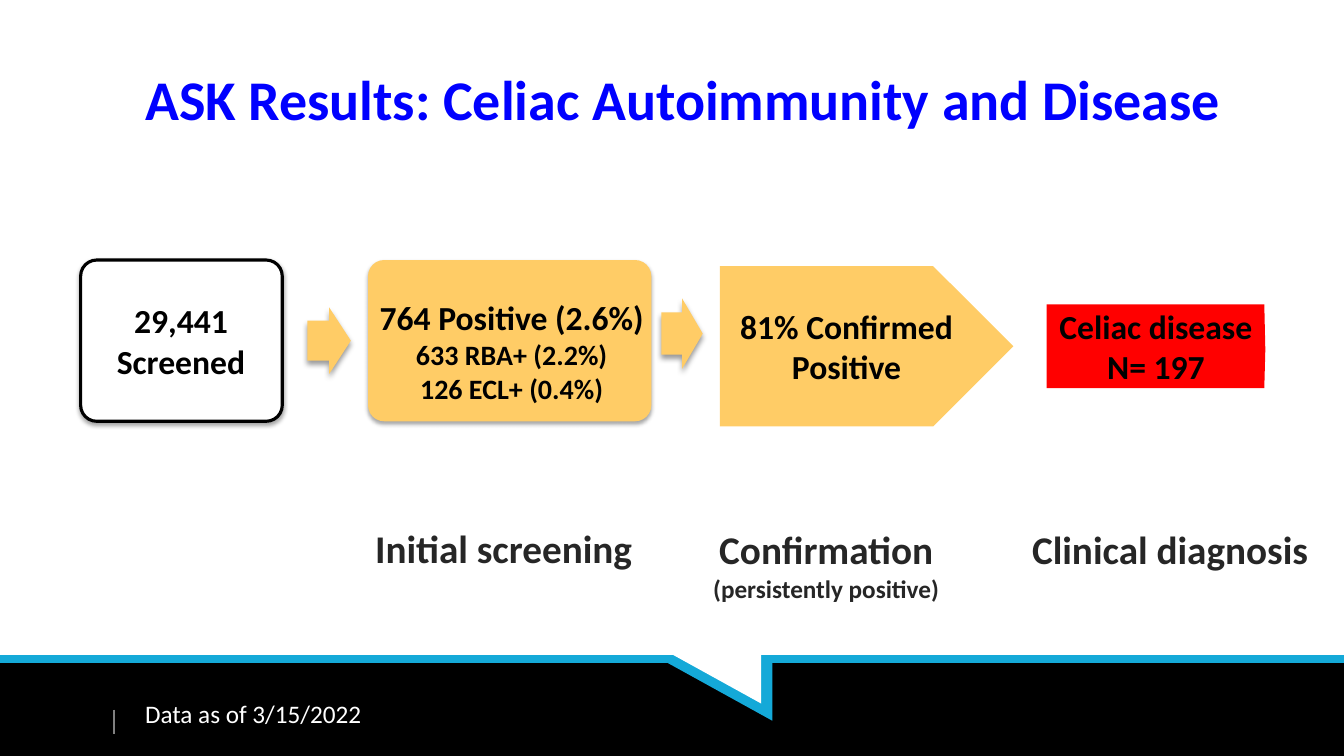
from dataclasses import dataclass

from lxml.etree import SubElement
from pptx import Presentation
from pptx.dml.color import RGBColor as RGB
from pptx.enum.shapes import MSO_CONNECTOR as LINE, MSO_SHAPE as SHAPE
from pptx.enum.text import MSO_ANCHOR as ANCHOR, PP_ALIGN as ALIGN
from pptx.oxml.ns import qn
from pptx.util import Inches, Pt


@dataclass(frozen=True)
class Theme:
    font: str = "Calibri"
    black: str = "000000"
    white: str = "FFFFFF"
    blue: str = "0000FF"
    cyan: str = "14A9D8"
    gold: str = "FFCC66"
    red: str = "FF0000"
    gray: str = "808080"
    dark: str = "262626"
    head: int = 40
    stage: int = 28
    body: int = 24
    sub: int = 20
    note: int = 18


class Board:
    def __init__(self, slide, theme):
        self.slide = slide
        self.theme = theme

    def shade(self, item, shadow=None):
        """Shadow is opacity %, blur, distance; None leaves it off."""
        props = item._element.spPr
        for old in props.findall(qn("a:effectLst")):
            props.remove(old)
        effects = SubElement(props, qn("a:effectLst"))
        if shadow:
            alpha, blur, dist = shadow
            outer = SubElement(effects, qn("a:outerShdw"), blurRad=str(Pt(blur)),
                               dist=str(Pt(dist)), dir="5400000", rotWithShape="0")
            color = SubElement(outer, qn("a:srgbClr"), val=self.theme.black)
            SubElement(color, qn("a:alpha"), val=str(alpha * 1000))

    def paint(self, item, fill, line=None, shadow=None):
        item.fill.solid()
        item.fill.fore_color.rgb = RGB.from_string(fill)
        if line:
            item.line.color.rgb = RGB.from_string(line)
            item.line.width = Pt(2.25)
        else:
            item.line.fill.background()
        self.shade(item, shadow)

    def shape(self, kind, box, fill, line=None, shadow=None, adj=(), turn=0):
        item = self.slide.shapes.add_shape(kind, *map(Inches, box))
        for i, value in enumerate(adj):
            item.adjustments[i] = value
        item.rotation = turn
        self.paint(item, fill, line, shadow)
        return item

    def outline(self, points, fill):
        first, *rest = [(Inches(x), Inches(y)) for x, y in points]
        pen = self.slide.shapes.build_freeform(*first)
        pen.add_line_segments(rest, close=True)
        item = pen.convert_to_shape()
        self.paint(item, fill)
        return item

    def rule(self, ends, color, width, shadow=None):
        item = self.slide.shapes.add_connector(LINE.STRAIGHT, *map(Inches, ends))
        item.line.color.rgb = RGB.from_string(color)
        item.line.width = Pt(width)
        self.shade(item, shadow)

    def label(self, item, lines, color, bold=True, align=ALIGN.CENTER,
              anchor=ANCHOR.MIDDLE, inset=None, wrap=True, tight=False):
        """Lines are pairs of text and size."""
        frame = item.text_frame
        frame.word_wrap = wrap
        frame.vertical_anchor = anchor
        if inset is not None:
            frame.margin_left = frame.margin_right = Inches(inset)
            frame.margin_top = frame.margin_bottom = Inches(inset)
        frame.text = "\n".join(text for text, _ in lines)
        for para, (_, size) in zip(frame.paragraphs, lines):
            para.alignment = align
            if tight:
                para.line_spacing = 0.6
                para.space_after = Pt(size * 0.35)
            for run in para.runs:
                run.font.name = self.theme.font
                run.font.size = Pt(size)
                run.font.bold = bold
                run.font.color.rgb = RGB.from_string(color)

    def text(self, box, lines, color, **style):
        item = self.slide.shapes.add_textbox(*map(Inches, box))
        self.label(item, lines, color, **style)

    def title(self, box, text):
        item = self.slide.shapes.title
        item.left, item.top, item.width, item.height = map(Inches, box)
        self.label(item, [(text, self.theme.head)], self.theme.blue, align=ALIGN.LEFT)


def main():
    deck = Presentation()
    deck.slide_width, deck.slide_height = Inches(13.33), Inches(7.5)
    look = Theme()
    board = Board(deck.slides.add_slide(deck.slide_layouts[5]), look)

    # Footer band with its notch
    board.shape(SHAPE.RECTANGLE, (0, 6.54, 13.33, 0.96), look.black)
    board.rule((0, 6.54, 13.33, 6.54), look.cyan, 6)
    for left, top, fill in [(6.61, 6.57, look.cyan), (6.5, 6.4, look.white)]:
        board.shape(SHAPE.RIGHT_TRIANGLE, (left, top, 1.05, 0.58), fill, turn=180)
    board.rule((1.13, 7.04, 1.13, 7.28), look.gray, 1, (38, 3.1, 1.6))
    board.text((1.34, 6.88, 3.48, 0.4), [("Data as of 3/15/2022", look.note)],
               look.white, bold=False, align=ALIGN.LEFT)

    # Title
    board.title((1.34, 0.35, 12.47, 1.25), "ASK Results: Celiac Autoimmunity and Disease")

    # Screened and positive cards
    soft = (35, 3.1, 1.8)
    cards = [
        (0.8, 2, look.white, look.black, (1.05, 2.93, 1.49, 0.91), False,
         [("29,441", look.body), ("Screened", look.body)]),
        (3.65, 2.81, look.gold, None, (3.35, 2.9, 3.45, 1.58), True,
         [("764 Positive (2.6%)", look.body), ("633 RBA+ (2.2%)", look.sub),
          ("126 ECL+ (0.4%)", look.sub)]),
    ]
    for left, width, fill, line, box, wrap, lines in cards:
        board.shape(SHAPE.ROUNDED_RECTANGLE, (left, 2.58, width, 1.6), fill, line,
                    soft, [0.1])
        board.text(box, lines, look.black, anchor=ANCHOR.TOP, wrap=wrap)

    # Arrows between the steps
    for box in [(3.05, 3.05, 0.43, 0.66), (6.56, 2.96, 0.41, 0.7)]:
        board.shape(SHAPE.RIGHT_ARROW, box, look.gold, shadow=(40, 4, 3), adj=[0.6, 0.5])

    # Confirmed step and final diagnosis
    step = board.shape(SHAPE.PENTAGON, (7.14, 2.64, 2.91, 1.59), look.gold)
    board.label(step, [("81% Confirmed Positive", look.body)], look.black, inset=0.08)
    final = board.outline([(10.38, 3.02), (12.54, 3.02), (12.55, 3.47),
                           (12.54, 3.85), (10.38, 3.85)], look.red)
    board.label(final, [("Celiac disease", look.body), ("N= 197", look.body)],
                look.black, inset=0.08)

    # Stage captions
    stages = [
        ((3.26, 5.32, 3.47, 0.42), True, [("Initial screening", look.stage)]),
        ((6.96, 5.33, 2.47, 0.73), False,
         [("Confirmation", look.stage), ("(persistently positive)", look.note)]),
        ((10.12, 5.33, 2.97, 0.42), False, [("Clinical diagnosis", look.stage)]),
    ]
    for box, wrap, lines in stages:
        board.text(box, lines, look.dark, anchor=ANCHOR.TOP, wrap=wrap, tight=True)

    deck.save("out.pptx")


if __name__ == "__main__":
    main()
